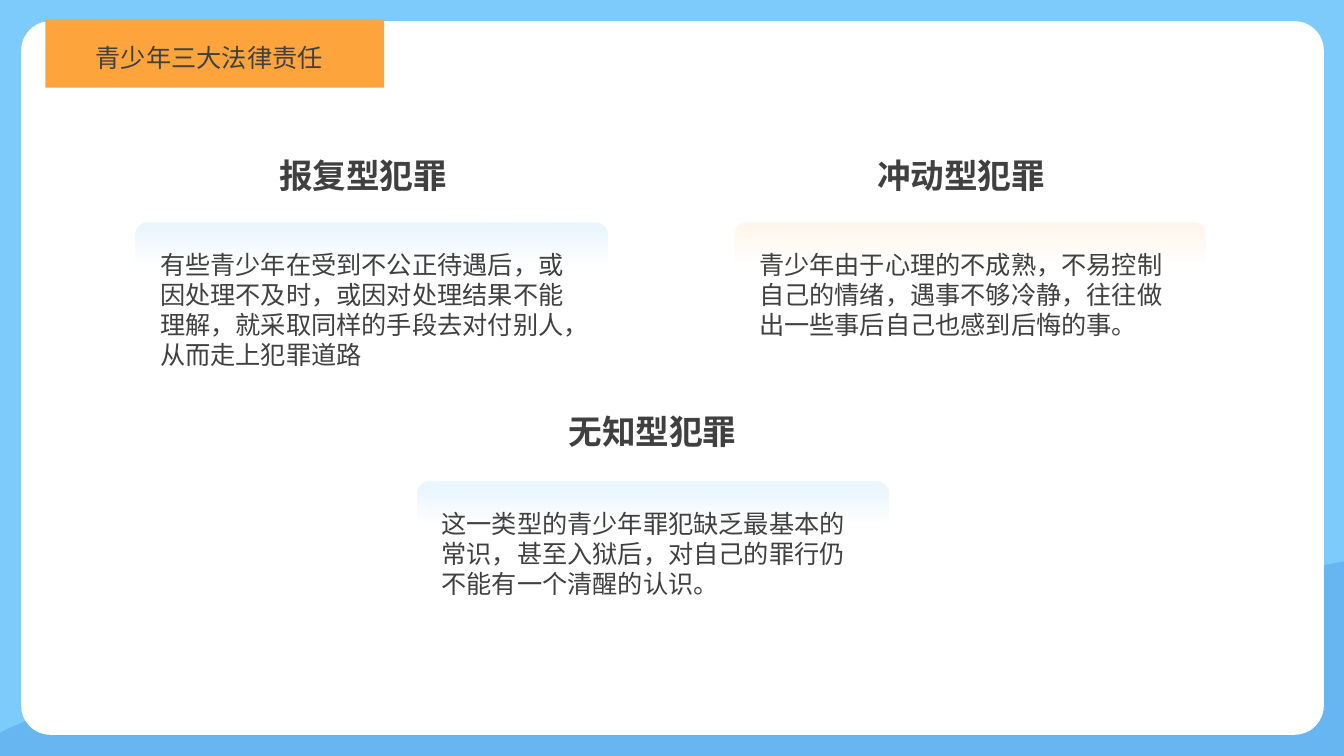
from lxml import etree
from pptx import Presentation
from pptx.dml.color import RGBColor
from pptx.enum.shapes import MSO_SHAPE
from pptx.enum.text import MSO_ANCHOR, PP_ALIGN
from pptx.oxml import parse_xml
from pptx.oxml.ns import nsdecls, qn
from pptx.util import Inches, Pt

RECT, ROUNDED = MSO_SHAPE.RECTANGLE, MSO_SHAPE.ROUNDED_RECTANGLE
TOP = MSO_ANCHOR.TOP
LEFT, JUSTIFY = PP_ALIGN.LEFT, PP_ALIGN.JUSTIFY
SKY = RGBColor(0x7C, 0xCB, 0xFA)
WAVE = RGBColor(0x67, 0xB6, 0xF2)
WHITE = RGBColor(0xFF, 0xFF, 0xFF)
ORANGE = RGBColor(0xFE, 0xA4, 0x3C)
BLUE = RGBColor(0x1C, 0x93, 0xEC)
GREY = RGBColor(0x40, 0x40, 0x40)
FONT = "Noto Sans CJK SC"
WAVE_CURVES = [
    [(0.1, 7.22), (0.75, 6.94), (1.67, 6.65), (2.75, 6.58)],
    [(2.75, 6.58), (4.48, 6.46), (7.78, 7.09), (9.61, 7)],
    [(9.61, 7), (11.16, 6.92), (12.17, 5.86), (13.16, 5.6)],
]
CARDS = [
    (1.35, 2.21, 2.67, 1.49, BLUE, "报复型犯罪",
     "有些青少年在受到不公正待遇后，或因处理不及时，或因对处理结果不能理解，"
     "就采取同样的手段去对付别人，从而走上犯罪道路"),
    (7.29, 2.21, 8.6, 1.49, ORANGE, "冲动型犯罪",
     "青少年由于心理的不成熟，不易控制自己的情绪，遇事不够冷静，"
     "往往做出一些事后自己也感到后悔的事。"),
    (4.14, 4.78, 5.54, 4.03, BLUE, "无知型犯罪",
     "这一类型的青少年罪犯缺乏最基本的常识，甚至入狱后，"
     "对自己的罪行仍不能有一个清醒的认识。"),
]


def paint(shape, color):
    shape.shadow.inherit = False
    shape.fill.solid()
    shape.fill.fore_color.rgb = color
    shape.line.fill.background()


def add_block(s, kind, x, y, w, h, color, radius=None):
    shape = s.shapes.add_shape(kind, Inches(x), Inches(y), Inches(w), Inches(h))
    if radius is not None:
        shape.adjustments[0] = radius
    paint(shape, color)
    return shape


def curve_points(p0, p1, p2, p3, steps=24):
    for i in range(1, steps + 1):
        t = i / steps
        u = 1 - t
        yield tuple(u**3 * a + 3 * u * u * t * b + 3 * u * t * t * c + t**3 * d
                    for a, b, c, d in zip(p0, p1, p2, p3))


def add_wave(s):
    points = [(13.33, 7.5), (0, 7.5), (0, 7.27), (0.1, 7.22)]
    for curve in WAVE_CURVES:
        points += curve_points(*curve)
    builder = s.shapes.build_freeform(Inches(13.33), Inches(5.57))
    builder.add_line_segments([(Inches(x), Inches(y)) for x, y in points])
    paint(builder.convert_to_shape(), WAVE)


def fade_top(shape, color):
    stops = "".join(
        f'<a:gs pos="{pos}"><a:srgbClr val="{color}"><a:alpha val="{alpha}"/></a:srgbClr></a:gs>'
        for pos, alpha in ((76000, 0), (97000, 9000)))
    grad = parse_xml(f'<a:gradFill {nsdecls("a")} rotWithShape="1"><a:gsLst>{stops}</a:gsLst>'
                     '<a:lin ang="16200000" scaled="0"/></a:gradFill>')
    sp_pr = shape._element.spPr
    sp_pr.replace(sp_pr.find(qn("a:solidFill")), grad)


def write(shape, text, size, bold=False, align=LEFT, wrap=True):
    tf = shape.text_frame
    tf.word_wrap = wrap
    tf.vertical_anchor = TOP
    tf.text = text
    p = tf.paragraphs[0]
    p.alignment = align
    font = p.font
    font.size = Pt(size)
    font.bold = bold
    font.color.rgb = GREY
    font.name = FONT
    props = p._p.pPr.find(qn("a:defRPr"))
    etree.SubElement(props, qn("a:ea")).set("typeface", FONT)


def add_text(s, x, y, w, h, text, size, **style):
    box = s.shapes.add_textbox(Inches(x), Inches(y), Inches(w), Inches(h))
    write(box, text, size, **style)


def set_title(s, text):
    title = s.shapes.title
    title.left, title.top = Inches(0.85), Inches(0.37)
    title.width, title.height = Inches(2.61), Inches(0.4)
    write(title, text, 18, align=JUSTIFY)
    s.shapes._spTree.append(title._element)


def add_card(s, x, y, head_x, head_y, color, heading, body):
    add_text(s, head_x, head_y, 1.88, 0.5, heading, 24, bold=True, wrap=False)
    fade_top(add_block(s, ROUNDED, x, y, 4.67, 1.69, color, 0.07), color)
    add_text(s, x + 0.14, y + 0.21, 4.23, 1.31, body, 18)


def main():
    """Build the slide on the three types of juvenile crime."""
    prs = Presentation()
    prs.slide_width, prs.slide_height = Inches(13.33), Inches(7.5)
    s = prs.slides.add_slide(prs.slide_layouts[5])
    add_block(s, RECT, 0, 0, 13.33, 7.5, SKY)
    add_wave(s)
    add_block(s, ROUNDED, 0.21, 0.21, 12.92, 7.08, WHITE, 0.041)
    add_block(s, RECT, 0.45, 0.19, 3.36, 0.68, ORANGE)
    set_title(s, "青少年三大法律责任")
    for card in CARDS:
        add_card(s, *card)
    prs.save("out.pptx")


if __name__ == "__main__":
    main()
